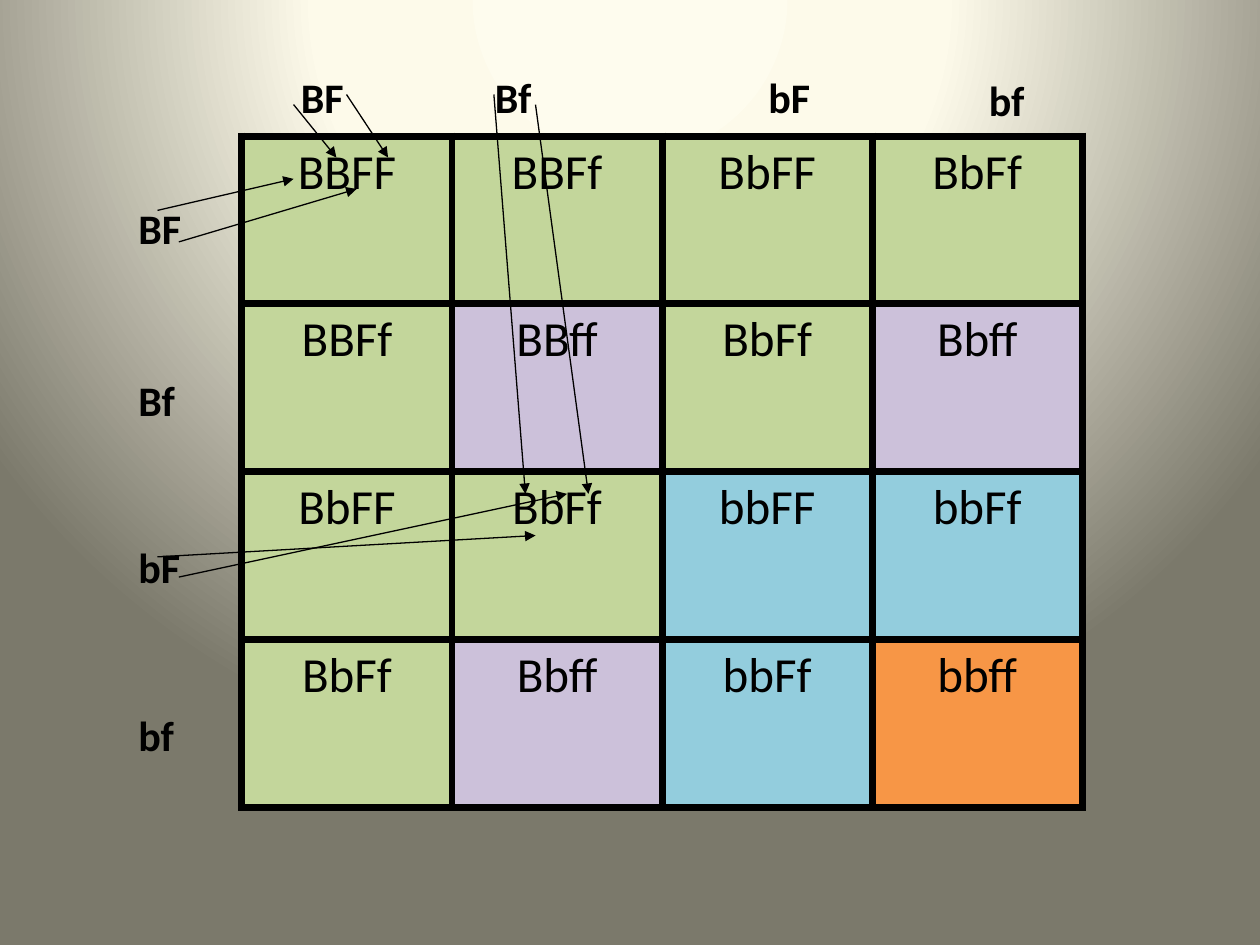
"""Build a slide with the Punnett square of a dihybrid cross."""
from lxml.etree import SubElement
from pptx import Presentation
from pptx.dml.color import RGBColor
from pptx.enum.shapes import MSO_CONNECTOR as Connector
from pptx.enum.text import MSO_AUTO_SIZE as AutoSize, PP_ALIGN as Align
from pptx.oxml import parse_xml
from pptx.oxml.ns import nsdecls, qn
from pptx.util import Inches, Pt

COLORS = {
    "ink": "000000",
    "B-F-": "C3D69B",
    "B-ff": "CCC1DA",
    "bbF-": "93CDDD",
    "bbff": "F79646",
}
BACKDROP = [(0, "FEFCEE"), (40, "FDFAEA"), (100, "7B796B")]
GAMETES = ["BF", "Bf", "bF", "bf"]
COLUMN_LABELS = [(2.29, 0.52), (3.83, 0.52), (6, 0.52), (7.75, 0.54)]
ROW_LABELS = [(1, 1.56), (1, 2.92), (1, 4.25), (1, 5.58)]
ALLELE_PATHS = [
    ((1.25, 1.67), (2.33, 1.42)),
    ((2.33, 0.83), (2.67, 1.25)),
    ((1.42, 1.92), (2.83, 1.5)),
    ((2.75, 0.75), (3.08, 1.25)),
    ((1.25, 4.42), (4.25, 4.25)),
    ((3.92, 0.75), (4.17, 3.92)),
    ((1.42, 4.58), (4.5, 3.92)),
    ((4.25, 0.83), (4.67, 3.92)),
]


def cross(first, second):
    """Return the genotype of two gametes, dominant alleles first."""
    return "".join("".join(sorted(locus)) for locus in zip(first, second))


def phenotype(genotype):
    """Return the phenotype class, such as B-ff, of a genotype."""
    loci = genotype[:2], genotype[2:]
    return "".join(locus if locus.islower() else locus[0] + "-" for locus in loci)


class SlideBuilder:
    """Hold the style and the current slide, and add elements to it."""

    font_name = "Calibri"
    label_size = 24
    genotype_size = 28
    border_width = 4.5
    arrow_width = 0.75

    def __init__(self, slide):
        """Keep the slide to draw on."""
        self.slide = slide

    def color(self, name):
        """Return a palette colour."""
        return RGBColor.from_string(COLORS[name])

    def style(self, paragraph, size, bold=False):
        """Set the font of a paragraph."""
        font = paragraph.font
        font.name, font.size, font.bold = self.font_name, Pt(size), bold
        font.color.rgb = self.color("ink")

    def background(self, stops):
        """Fill the background with a circular gradient centred above the slide."""
        stop_list = "".join(
            f'<a:gs pos="{position * 1000}"><a:srgbClr val="{value}"/></a:gs>'
            for position, value in stops
        )
        self.slide.element.cSld.insert(0, parse_xml(
            f'<p:bg {nsdecls("p", "a")}><p:bgPr><a:gradFill rotWithShape="1">'
            f'<a:gsLst>{stop_list}</a:gsLst><a:path path="circle">'
            '<a:fillToRect l="50000" t="-80000" r="50000" b="180000"/></a:path>'
            '</a:gradFill><a:effectLst/></p:bgPr></p:bg>'
        ))

    def border(self, cell):
        """Draw all four borders of a cell."""
        properties = cell._tc.get_or_add_tcPr()
        for side in ("lnL", "lnR", "lnT", "lnB"):
            line = SubElement(properties, qn(f"a:{side}"), w=str(Pt(self.border_width)))
            fill = SubElement(line, qn("a:solidFill"))
            SubElement(fill, qn("a:srgbClr"), val=COLORS["ink"])

    def punnett_square(self, gametes, left, top, width, height):
        """Add the table of all crosses, coloured by phenotype."""
        count = len(gametes)
        table = self.slide.shapes.add_table(
            count, count, Inches(left), Inches(top), Inches(width), Inches(height)
        ).table
        table.first_row = table.horz_banding = False
        for row, maternal in enumerate(gametes):
            for column, paternal in enumerate(gametes):
                genotype = cross(maternal, paternal)
                cell = table.cell(row, column)
                cell.text = genotype
                paragraph = cell.text_frame.paragraphs[0]
                paragraph.alignment = Align.CENTER
                self.style(paragraph, self.genotype_size)
                self.border(cell)
                cell.fill.solid()
                cell.fill.fore_color.rgb = self.color(phenotype(genotype))

    def label(self, gamete, left, top):
        """Add a bold gamete label."""
        frame = self.slide.shapes.add_textbox(
            Inches(left), Inches(top), Inches(0.58), Inches(0.5)
        ).text_frame
        frame.word_wrap = True
        frame.auto_size = AutoSize.SHAPE_TO_FIT_TEXT
        frame.text = gamete
        self.style(frame.paragraphs[0], self.label_size, bold=True)

    def arrow(self, start, end):
        """Add a thin arrow from an allele to its place in a genotype."""
        connector = self.slide.shapes.add_connector(
            Connector.STRAIGHT, *(Inches(value) for value in start + end)
        )
        connector.line.width = Pt(self.arrow_width)
        connector.line.color.rgb = self.color("ink")
        SubElement(connector.line._get_or_add_ln(), qn("a:tailEnd"), type="triangle")
        SubElement(connector._element.spPr, qn("a:effectLst"))


def main():
    """Build and save the presentation."""
    presentation = Presentation()
    presentation.slide_width, presentation.slide_height = Inches(10), Inches(7.5)
    blank_layout = presentation.slide_layouts[6]
    builder = SlideBuilder(presentation.slides.add_slide(blank_layout))
    builder.background(BACKDROP)
    builder.punnett_square(GAMETES, 1.92, 1.08, 6.67, 5.33)
    for positions in (COLUMN_LABELS, ROW_LABELS):
        for gamete, (left, top) in zip(GAMETES, positions):
            builder.label(gamete, left, top)
    for start, end in ALLELE_PATHS:
        builder.arrow(start, end)
    presentation.save("out.pptx")


if __name__ == "__main__":
    main()
